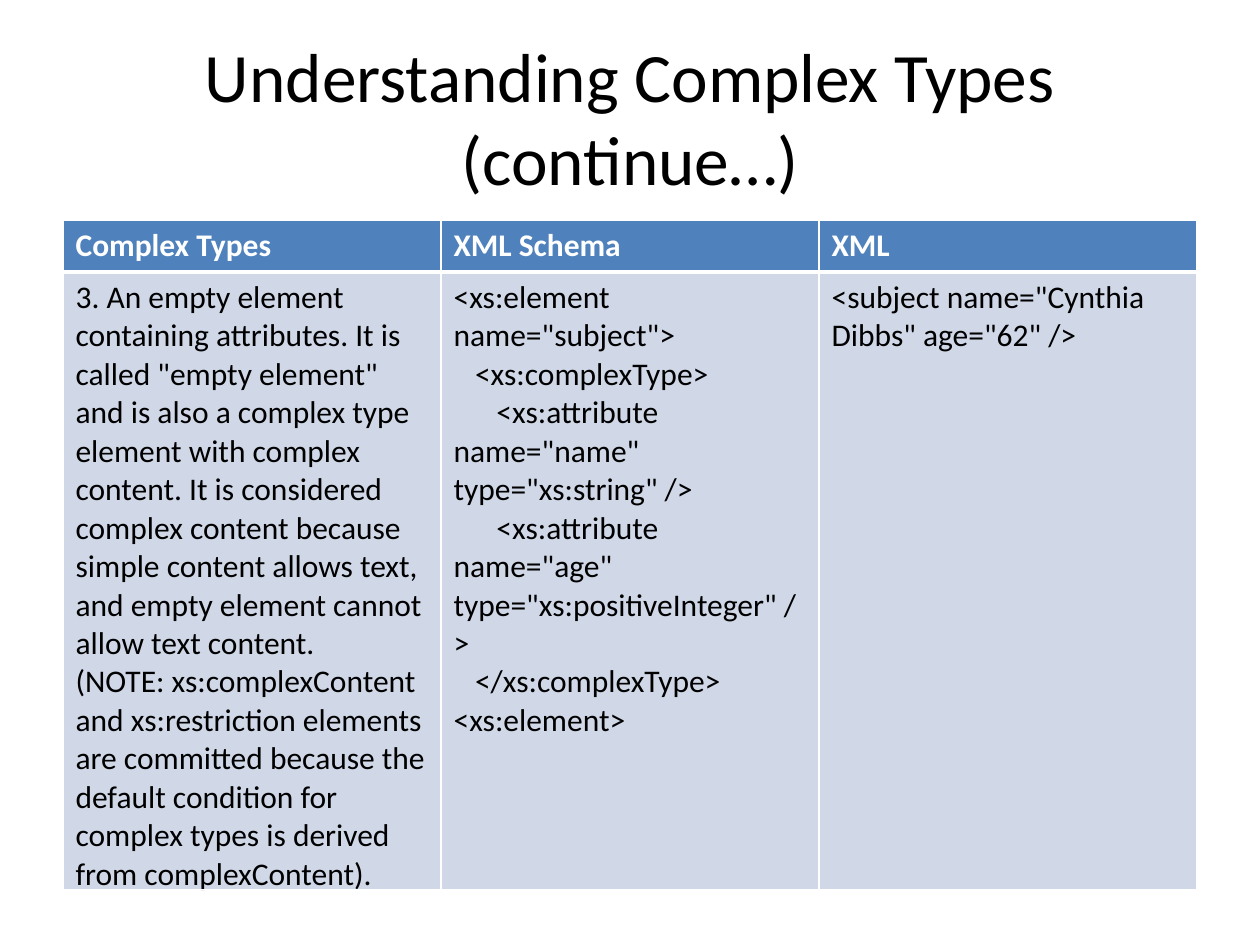
from lxml.etree import SubElement
from pptx import Presentation
from pptx.dml.color import RGBColor
from pptx.enum.text import MSO_ANCHOR, PP_ALIGN
from pptx.oxml.ns import qn
from pptx.util import Inches, Pt

FONT = "Calibri"
TITLE = "Understanding Complex Types (continue…)"
HEADERS = ["Complex Types", "XML Schema", "XML"]
# Each cell holds (indent level, text) paragraphs
BODY = [
    [
        (0, '3. An empty element containing attributes. It is called "empty element" '
            "and is also a complex type element with complex content. It is considered "
            "complex content because simple content allows text, and empty element "
            "cannot allow text content."),
        (0, "(NOTE: xs:complexContent and xs:restriction elements are committed because "
            "the default condition for complex types is derived from complexContent)."),
    ],
    [
        (0, '<xs:element name="subject">'),
        (1, "<xs:complexType>"),
        (2, '<xs:attribute name="name" type="xs:string" />'),
        (2, '<xs:attribute name="age" type="xs:positiveInteger" />'),
        (1, "</xs:complexType>"),
        (0, "<xs:element>"),
    ],
    [(0, '<subject name="Cynthia Dibbs" age="62" />')],
]
ROWS = [
    # paragraphs, fill, text colour, bold, top border, bottom border
    ([[(0, header)] for header in HEADERS], "4F81BD", "FFFFFF", True, 1, 3),
    (BODY, "D0D8E8", "000000", False, 3, 1),
]
ROW_HEIGHTS = [0.41, 4.9]
MARGIN, TABLE_TOP = 0.5, 1.75
INDENT = Inches(0.17)


def color(hex_code):
    return RGBColor.from_string(hex_code)


def style(para, size, hex_code, bold=False):
    for span in para.runs:
        span.font.name = FONT
        span.font.size = Pt(size)
        span.font.bold = bold
        span.font.color.rgb = color(hex_code)


def set_borders(cell, top, bottom):
    """Draw white borders; these must come before the cell's fill in the XML."""
    properties = cell._tc.get_or_add_tcPr()
    for side, width in (("L", 1), ("R", 1), ("T", top), ("B", bottom)):
        line = SubElement(properties, qn(f"a:ln{side}"), w=str(Pt(width)))
        fill = SubElement(line, qn("a:solidFill"))
        SubElement(fill, qn("a:srgbClr"), val="FFFFFF")


def add_title(page, width):
    box = page.shapes.add_textbox(Inches(MARGIN), Inches(0.3), width, Inches(1.25))
    frame = box.text_frame
    frame.word_wrap = True
    frame.vertical_anchor = MSO_ANCHOR.MIDDLE
    frame.text = TITLE
    frame.paragraphs[0].alignment = PP_ALIGN.CENTER
    style(frame.paragraphs[0], 39.6, "000000")


def fill_cell(cell, lines, fill, text_color, bold, top, bottom):
    set_borders(cell, top, bottom)
    cell.fill.solid()
    cell.fill.fore_color.rgb = color(fill)
    cell.text_frame.text = "\n".join(text for _, text in lines)
    for para, (level, _) in zip(cell.text_frame.paragraphs, lines):
        style(para, 18, text_color, bold)
        if level:  # only the first line is indented; wrapped lines return to the edge
            properties = para._p.get_or_add_pPr()
            properties.set("marL", "0")
            properties.set("indent", str(level * INDENT))


def add_types_table(page, width):
    table = page.shapes.add_table(
        len(ROWS), len(HEADERS), Inches(MARGIN), Inches(TABLE_TOP),
        width, Inches(sum(ROW_HEIGHTS))).table
    table.horz_banding = False
    for row, height, (cells, *look) in zip(table.rows, ROW_HEIGHTS, ROWS):
        row.height = Inches(height)
        for cell, lines in zip(row.cells, cells):
            fill_cell(cell, lines, *look)


def main():
    deck = Presentation()
    deck.slide_width, deck.slide_height = Inches(10), Inches(7.5)
    page = deck.slides.add_slide(deck.slide_layouts[6])
    content_width = deck.slide_width - 2 * Inches(MARGIN)
    add_title(page, content_width)
    add_types_table(page, content_width)
    deck.save("out.pptx")


if __name__ == "__main__":
    main()
